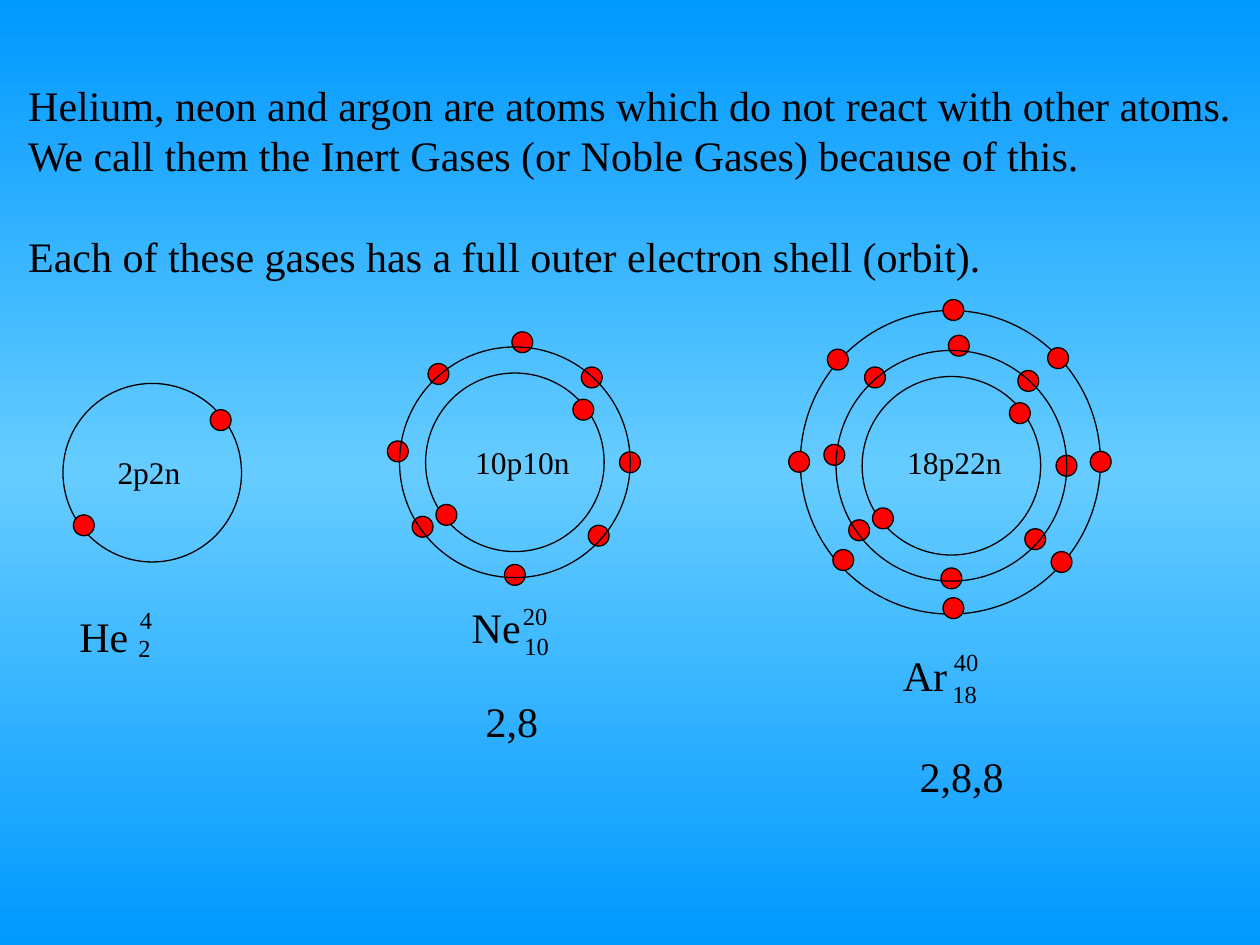
from copy import deepcopy

from pptx import Presentation
from pptx.dml.color import RGBColor
from pptx.enum.shapes import MSO_SHAPE as Shape
from pptx.enum.text import MSO_AUTO_SIZE as AutoSize
from pptx.oxml.ns import qn
from pptx.util import Cm, Pt

COLORS = {"edge": "0099FF", "middle": "66CCFF", "electron": "FF0000", "ink": "000000"}
FONT = "Times New Roman"
ELECTRON_SIZE = 0.42

SHELLS = [
    {"size": (3.6, 3.6), "center": (0, 0),
     "electrons": [(1.38, -1.06), (-1.38, 1.06)]},
    {"size": (4.65, 4.65), "center": (0, 0),
     "electrons": [(0, 2.27), (0.15, -2.42), (-2.36, -0.22), (2.32, 0),
                   (-1.54, -1.78), (-1.86, 1.3), (1.69, 1.48), (1.55, -1.71)]},
    {"size": (6.05, 6.12), "center": (-0.02, -0.07),
     "electrons": [(-3.07, -0.08), (3.01, -0.08), (0.04, 2.87), (0.04, -3.14),
                   (-2.29, -2.14), (-2.18, 1.9), (2.22, 1.94), (2.15, -2.17)]},
]

ATOMS = [
    {"center": (3.07, 9.53), "shells": 1, "nucleus": ("2p2n", -0.95, -0.52, 1.78),
     "symbol_at": (1.35, 12.19),
     "nuclide": [("He", 0, 0, 1.5, 24), ("4", 1.22, -0.11, 0.76, 14),
                 ("2", 1.19, 0.45, 0.76, 14)]},
    {"center": (10.38, 9.32), "shells": 2, "nucleus": ("10p10n", -1.05, -0.52, 2.41),
     "symbol_at": (9.26, 12.01),
     "nuclide": [("Ne", 0, 0, 1.5, 24), ("20", 1.03, -0.01, 1.02, 14),
                 ("10", 1.06, 0.59, 1.02, 14), ("2,8", 0.28, 1.88, 1.57, 24)]},
    {"center": (19.18, 9.39), "shells": 3, "nucleus": ("18p22n", -1.14, -0.58, 2.41),
     "symbol_at": (17.95, 12.97),
     "nuclide": [("Ar", 0, 0, 1.4, 24), ("40", 1.03, -0.06, 1.02, 14),
                 ("18", 1, 0.59, 1.02, 14), ("2,8,8", 0.34, 2.04, 2.21, 24)]},
]

INTRO = [
    "Helium, neon and argon are atoms which do not react with other atoms.",
    "We call them the Inert Gases (or Noble Gases) because of this.",
    "Each of these gases has a full outer electron shell (orbit).",
]


def rgb(name):
    return RGBColor.from_string(COLORS[name])


def paint_background(slide):
    fill = slide.background.fill
    fill.gradient()
    fill.gradient_angle = 90
    stop_list = slide.element.find(".//" + qn("a:gsLst"))
    stop_list.insert(1, deepcopy(stop_list[0]))
    for stop, position, name in zip(fill.gradient_stops, (0, 0.5, 1),
                                    ("edge", "middle", "edge")):
        stop.position = position
        stop.color.rgb = rgb(name)


def add_text(slide, lines, left, top, width, height, size):
    frame = slide.shapes.add_textbox(Cm(left), Cm(top), Cm(width), Cm(height)).text_frame
    frame.word_wrap = False
    frame.auto_size = AutoSize.SHAPE_TO_FIT_TEXT
    frame.text = "\n".join(lines)
    for paragraph in frame.paragraphs:
        for run in paragraph.runs:
            run.font.size = Pt(size)
            run.font.name = FONT
            run.font.color.rgb = rgb("ink")
    return frame


def add_intro(slide, left, top, width, height):
    intro = add_text(slide, INTRO, left, top, width, height, 24)
    intro.paragraphs[-1].space_before = Pt(28.8)


def add_circle(shapes, x, y, width, height, color=None):
    circle = shapes.add_shape(Shape.OVAL, Cm(x - width / 2), Cm(y - height / 2),
                              Cm(width), Cm(height))
    circle.shadow.inherit = False
    circle.line.color.rgb = rgb("ink")
    circle.line.width = Pt(0.75)
    if color:
        circle.fill.solid()
        circle.fill.fore_color.rgb = rgb(color)
    else:
        circle.fill.background()


def add_atom(slide, center, shell_count, nucleus):
    x, y = center
    atom = slide.shapes.add_group_shape().shapes
    for number, shell in enumerate(SHELLS[:shell_count]):
        dx, dy = shell["center"]
        ring = (atom, x + dx, y + dy, *shell["size"])
        ring_in_front = number == 1
        if not ring_in_front:
            add_circle(*ring)
        for electron_x, electron_y in shell["electrons"]:
            add_circle(atom, x + electron_x, y + electron_y,
                       ELECTRON_SIZE, ELECTRON_SIZE, "electron")
        if ring_in_front:
            add_circle(*ring)
    label, dx, dy, width = nucleus
    add_text(slide, [label], x + dx, y + dy, width, 1.02, 18)


def add_nuclide(slide, left, top, parts):
    for text, dx, dy, width, size in parts:
        height = 1.27 if size == 24 else 0.84
        add_text(slide, [text], left + dx, top + dy, width, height, size)


def main():
    deck = Presentation()
    deck.slide_width, deck.slide_height = Cm(25.4), Cm(19.05)
    slide = deck.slides.add_slide(deck.slide_layouts[6])
    paint_background(slide)
    add_intro(slide, 0.32, 1.47, 24.82, 4.32)
    for atom in ATOMS:
        add_atom(slide, atom["center"], atom["shells"], atom["nucleus"])
        add_nuclide(slide, *atom["symbol_at"], atom["nuclide"])
    deck.save("out.pptx")


if __name__ == "__main__":
    main()
